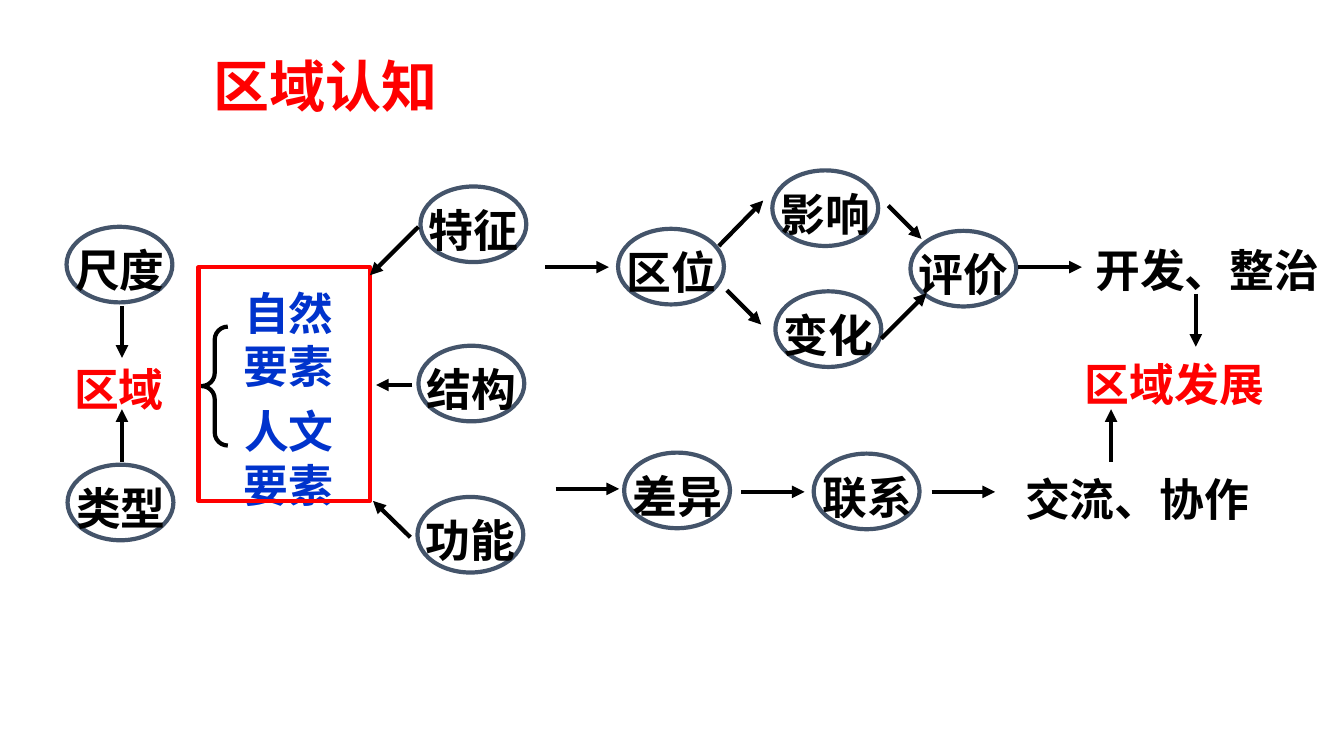
"""Build the slide on regional cognition: a concept map of ovals, labels and arrows."""
import pptx
import pptx.util
import pptx.dml.color
import pptx.enum.shapes
import pptx.enum.text
import pptx.oxml
import pptx.oxml.ns

Inches = pptx.util.Inches
Pt = pptx.util.Pt
RGBColor = pptx.dml.color.RGBColor
Shape = pptx.enum.shapes.MSO_SHAPE

RED = RGBColor(0xFF, 0x00, 0x00)
BLUE = RGBColor(0x00, 0x33, 0xCC)
BLACK = RGBColor(0x00, 0x00, 0x00)
SLATE = RGBColor(0x44, 0x54, 0x6A)
FONT = "Noto Sans CJK SC"
OVAL_WIDTH, OVAL_HEIGHT = 1.05, 0.75

OVALS = [
    ("尺度", 0.66, 2.25), ("类型", 0.67, 4.61),
    ("特征", 4.17, 1.85), ("结构", 4.15, 3.43), ("功能", 4.14, 4.93),
    ("区位", 6.13, 2.27), ("影响", 7.66, 1.69), ("变化", 7.69, 2.89),
    ("评价", 9.03, 2.29), ("差异", 6.19, 4.49), ("联系", 8.07, 4.5),
]
LABELS = [
    ("区域", 0.47, 3.59, 1.42, 0.54, RED),
    ("自然要素", 2.26, 2.83, 1.21, 1.08, BLUE),
    ("人文要素", 2.26, 4.01, 1.21, 1.08, BLUE),
    ("开发、整治", 10.77, 2.41, 2.41, 0.54, BLACK),
    ("区域发展", 10.34, 3.54, 2.62, 0.54, RED),
    ("交流、协作", 9.97, 4.68, 2.62, 0.54, BLACK),
]
ARROWS = [
    (1.21, 3.04, 1.21, 3.55), (1.21, 4.58, 1.21, 4.06),
    (4.15, 2.25, 3.67, 2.73), (4.09, 3.82, 3.73, 3.82), (4.07, 5.33, 3.7, 4.97),
    (5.41, 2.65, 6.04, 2.65), (7.13, 2.44, 7.57, 1.99), (7.21, 2.88, 7.55, 3.22),
    (8.81, 2.04, 9.14, 2.37), (8.74, 3.36, 9.19, 2.91), (10.1, 2.65, 10.73, 2.65),
    (5.51, 4.85, 6.14, 4.85), (7.35, 4.88, 7.98, 4.88), (9.24, 4.88, 9.87, 4.88),
    (11.86, 2.92, 11.86, 3.44), (11.02, 4.58, 11.02, 4.06),
]


def write_text(box, text, size, color, side=0, top=0):
    """Fill a box with one centred bold paragraph."""
    frame = box.text_frame
    frame.word_wrap = True
    frame.auto_size = pptx.enum.text.MSO_AUTO_SIZE.NONE
    frame.vertical_anchor = pptx.enum.text.MSO_ANCHOR.TOP
    frame.margin_left = frame.margin_right = Inches(side)
    frame.margin_top = frame.margin_bottom = Inches(top)
    para = frame.paragraphs[0]
    para.alignment = pptx.enum.text.PP_ALIGN.CENTER
    span = para.add_run()
    span.text = text
    para.font.size = Pt(size)
    para.font.bold = True
    para.font.name = FONT
    para.font.color.rgb = color
    properties = span.font._element
    east_asian = pptx.oxml.parse_xml(
        f'<a:ea {pptx.oxml.ns.nsdecls("a")} typeface="{FONT}"/>')
    properties.append(east_asian)


def add_title(page, text):
    """Place and format the slide title."""
    title = page.shapes.title
    title.left, title.top = Inches(0.58), Inches(0.44)
    title.width, title.height = Inches(5.3), Inches(0.81)
    write_text(title, text, 40, RED, 0.13, 0.07)


def add_label(shapes, text, left, top, width, height, color, side=0, inset=0):
    """Add a free-standing text box."""
    box = shapes.add_textbox(Inches(left), Inches(top), Inches(width), Inches(height))
    write_text(box, text, 32, color, side, inset)


def add_outline(shapes, kind, left, top, width, height, color):
    """Add an unfilled preset shape with a thick outline."""
    shape = shapes.add_shape(
        kind, Inches(left), Inches(top), Inches(width), Inches(height))
    shape.shadow.inherit = False
    shape.fill.background()
    shape.line.color.rgb = color
    shape.line.width = Pt(3)
    return shape


def add_oval(page, text, left, top):
    """Add a grouped oval and its caption."""
    group = page.shapes.add_group_shape()
    add_outline(group.shapes, Shape.OVAL, left, top, OVAL_WIDTH, OVAL_HEIGHT, SLATE)
    add_label(group.shapes, text, left - 0.1, top + 0.11, 1.26, 0.64, BLACK, 0.1, 0.05)


def add_arrow(page, start_x, start_y, end_x, end_y):
    """Add a straight black arrow."""
    arrow = page.shapes.add_connector(
        pptx.enum.shapes.MSO_CONNECTOR.STRAIGHT,
        Inches(start_x), Inches(start_y), Inches(end_x), Inches(end_y))
    arrow.line.color.rgb = BLACK
    arrow.line.width = Pt(3)
    namespace = pptx.oxml.ns.nsdecls("a")
    arrow.line._get_or_add_ln().append(
        pptx.oxml.parse_xml(f'<a:tailEnd {namespace} type="triangle"/>'))
    arrow._element.spPr.append(pptx.oxml.parse_xml(f"<a:effectLst {namespace}/>"))


def main():
    """Build and save the deck."""
    deck = pptx.Presentation()
    deck.slide_width, deck.slide_height = Inches(13.33), Inches(7.5)
    page = deck.slides.add_slide(deck.slide_layouts[5])
    add_title(page, "区域认知")
    for label in LABELS:
        add_label(page.shapes, *label)
    brace = add_outline(page.shapes, Shape.LEFT_BRACE, 2, 3.24, 0.26, 1.18, BLACK)
    brace.adjustments[0] = 0.5
    add_outline(page.shapes, Shape.RECTANGLE, 1.97, 2.65, 1.7, 2.32, RED)
    for oval in OVALS:
        add_oval(page, *oval)
    for arrow in ARROWS:
        add_arrow(page, *arrow)
    deck.save("out.pptx")


if __name__ == "__main__":
    main()
